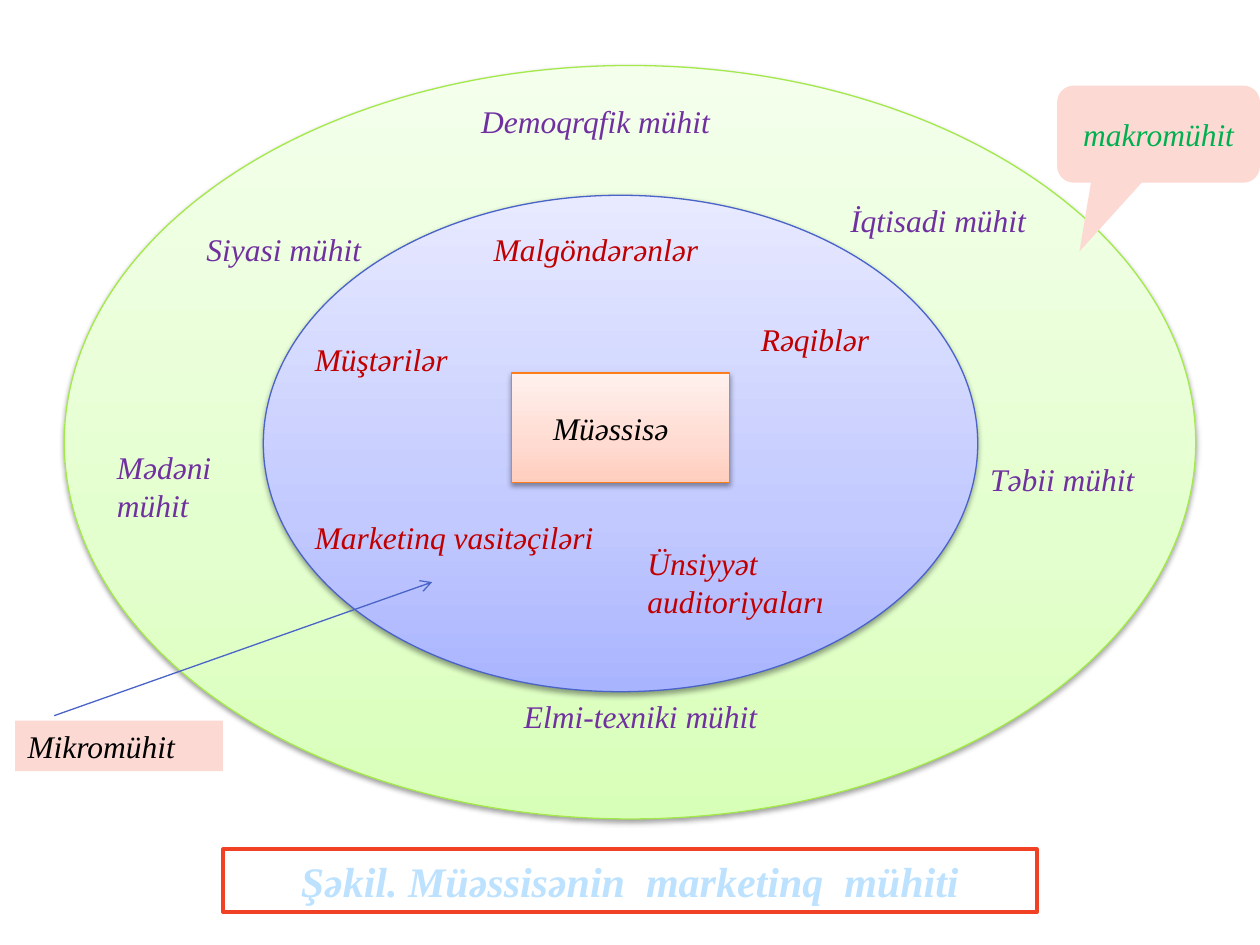
import copy
from dataclasses import dataclass

import pptx
import pptx.dml.color
import pptx.enum.dml
import pptx.enum.shapes
import pptx.enum.text
import pptx.oxml
import pptx.oxml.ns
import pptx.util

Inches = pptx.util.Inches
Pt = pptx.util.Pt
RGB = pptx.dml.color.RGBColor.from_string
SHAPE = pptx.enum.shapes.MSO_SHAPE
ANCHOR = pptx.enum.text.MSO_ANCHOR
ALIGN = pptx.enum.text.PP_ALIGN
AUTO_SIZE = pptx.enum.text.MSO_AUTO_SIZE
NS = pptx.oxml.ns.nsdecls("a")


@dataclass(frozen=True)
class Theme:
    font: str = "Times New Roman"
    body: int = 18
    title: int = 24
    thin: float = 0.75
    frame: float = 2
    black: str = "000000"
    macro_text: str = "7030A0"
    micro_text: str = "C00000"
    callout_text: str = "00B050"
    title_text: str = "BDE2FF"
    title_line: str = "F14124"
    white: str = "FFFFFF"
    note: str = "FCD9D3"
    blue: str = "4963C7"
    # line colour, then gradient colours from bottom to top
    green_style: tuple = ("A4E94C", "D8FFB8", "E3FFCD", "F4FFEC")
    blue_style: tuple = ("4963C7", "A9B4FF", "C2C9FF", "E8EAFF")
    orange_style: tuple = ("FF7C1B", "FFCDBD", "FFDBD1", "FFF1EE")


THEME = Theme()

MACRO_LABELS = [
    ("Demoqrqfik mühit", 3.21, 0.24, 2.62, 0.4),
    ("İqtisadi mühit", 6.14, 1.03, 1.73, 0.4),
    ("Təbii mühit", 7.25, 3.08, 1.57, 0.4),
    ("Elmi-texniki mühit", 3.55, 4.96, 3.31, 0.4),
    ("Siyasi mühit", 1.03, 1.26, 1.65, 0.4),
    ("Mədəni mühit", 0.32, 2.99, 1.26, 0.71),
]
MICRO_LABELS = [
    ("Malgöndərənlər", 1.73, 0.23, 2.13, 0.4),
    ("Müştərilər", 0.31, 1.1, 1.34, 0.4),
    ("Rəqiblər", 3.85, 0.94, 1.42, 0.4),
    ("Marketinq vasitəçiləri", 0.31, 2.51, 2.64, 0.4),
    ("Ünsiyyət auditoriyaları", 2.95, 2.72, 2.32, 0.71),
]


def write(sp, text, color, align=ALIGN.LEFT, anchor=ANCHOR.TOP, **font):
    tf = sp.text_frame
    for name, value in dict(word_wrap=True, auto_size=AUTO_SIZE.NONE,
                            vertical_anchor=anchor).items():
        setattr(tf, name, value)
    p = tf.paragraphs[0]
    p.alignment = align
    r = p.add_run()
    r.text = text
    style = dict(name=THEME.font, size=Pt(THEME.body), italic=True, bold=False)
    for name, value in {**style, **font}.items():
        setattr(r.font, name, value)
    r.font.color.rgb = RGB(color)


def add_glossy(s, kind, box, style):
    """Shape with a three-stop vertical gradient, a thin line and a soft shadow."""
    line, *colors = style
    sp = s.shapes.add_shape(kind, *map(Inches, box))
    sp.fill.gradient()
    sp.fill.gradient_angle = 90
    stop_list = sp._element.spPr.find(".//" + pptx.oxml.ns.qn("a:gsLst"))
    stop_list.append(copy.deepcopy(stop_list[0]))
    for stop, position, color in zip(sp.fill.gradient_stops, (0, 0.35, 1), colors):
        stop.position = position
        stop.color.rgb = RGB(color)
    sp.line.color.rgb = RGB(line)
    sp.line.width = Pt(THEME.thin)
    sp.shadow.inherit = False
    effects = sp._element.spPr.find(pptx.oxml.ns.qn("a:effectLst"))
    effects.append(pptx.oxml.parse_xml(
        f'<a:outerShdw {NS} blurRad="{Pt(3.1)}" dist="{Pt(1.6)}" dir="5400000" rotWithShape="0">'
        f'<a:srgbClr val="{THEME.black}"><a:alpha val="38000"/></a:srgbClr></a:outerShdw>'))
    return sp


def add_flat(s, kind, box, color):
    sp = s.shapes.add_shape(kind, *map(Inches, box))
    sp.shadow.inherit = False
    sp.fill.solid()
    sp.fill.fore_color.rgb = RGB(color)
    sp.line.fill.background()
    return sp


def add_environment(s, box, style, labels, color):
    """Ellipse with labels offset from the corner of its box."""
    add_glossy(s, SHAPE.OVAL, box, style)
    left, top = box[:2]
    for text, dx, dy, width, height in labels:
        label = s.shapes.add_textbox(*map(Inches, (left + dx, top + dy, width, height)))
        write(label, text, color)


def add_company(s, box):
    sp = add_glossy(s, SHAPE.RECTANGLE, box, THEME.orange_style)
    sp.text_frame.margin_left = Inches(0.33)
    write(sp, "Müəssisə", THEME.black, anchor=ANCHOR.MIDDLE)


def add_title(s, box):
    sp = s.shapes.title
    for name, value in zip(("left", "top", "width", "height"), box):
        setattr(sp, name, Inches(value))
    sp.fill.solid()
    sp.fill.fore_color.rgb = RGB(THEME.white)
    sp.line.color.rgb = RGB(THEME.title_line)
    sp.line.width = Pt(THEME.frame)
    write(sp, "Şəkil. Müəssisənin  marketinq  mühiti", THEME.title_text,
          ALIGN.CENTER, ANCHOR.MIDDLE, size=Pt(THEME.title), bold=True)


def add_macro_callout(s, box):
    sp = add_flat(s, SHAPE.ROUNDED_RECTANGULAR_CALLOUT, box, THEME.note)
    for i, value in enumerate((-0.39, 1.21, 0.17)):
        sp.adjustments[i] = value
    write(sp, "makromühit", THEME.callout_text, ALIGN.CENTER, ANCHOR.MIDDLE)


def add_micro_note(s, box):
    """Note with an arrow that points up into the inner ellipse."""
    left, top = box[:2]
    x, y = left + 0.31, top - 0.04
    arrow = s.shapes.add_connector(pptx.enum.shapes.MSO_CONNECTOR.STRAIGHT,
                                   *map(Inches, (x, y, x + 3, y - 1.06)))
    arrow.line.color.rgb = RGB(THEME.blue)
    arrow.line.width = Pt(THEME.thin)
    arrow.line._get_or_add_ln().append(
        pptx.oxml.parse_xml(f'<a:tailEnd {NS} type="arrow"/>'))
    arrow._element.spPr.append(pptx.oxml.parse_xml(f"<a:effectLst {NS}/>"))
    write(add_flat(s, SHAPE.RECTANGLE, box, THEME.note), "Mikromühit", THEME.black)


def main():
    prs = pptx.Presentation()
    prs.slide_width, prs.slide_height = Inches(10), Inches(7.5)
    s = prs.slides.add_slide(prs.slide_layouts.get_by_name("Title Only"))
    add_environment(s, (0.51, 0.52, 8.98, 5.98), THEME.green_style,
                    MACRO_LABELS, THEME.macro_text)
    add_environment(s, (2.09, 1.55, 5.67, 3.94), THEME.blue_style,
                    MICRO_LABELS, THEME.micro_text)
    add_company(s, (4.06, 2.96, 1.73, 0.87))
    add_title(s, (1.77, 6.74, 6.46, 0.5))
    add_macro_callout(s, (8.39, 0.68, 1.61, 0.77))
    add_micro_note(s, (0.12, 5.72, 1.65, 0.4))
    prs.save("out.pptx")


if __name__ == "__main__":
    main()
